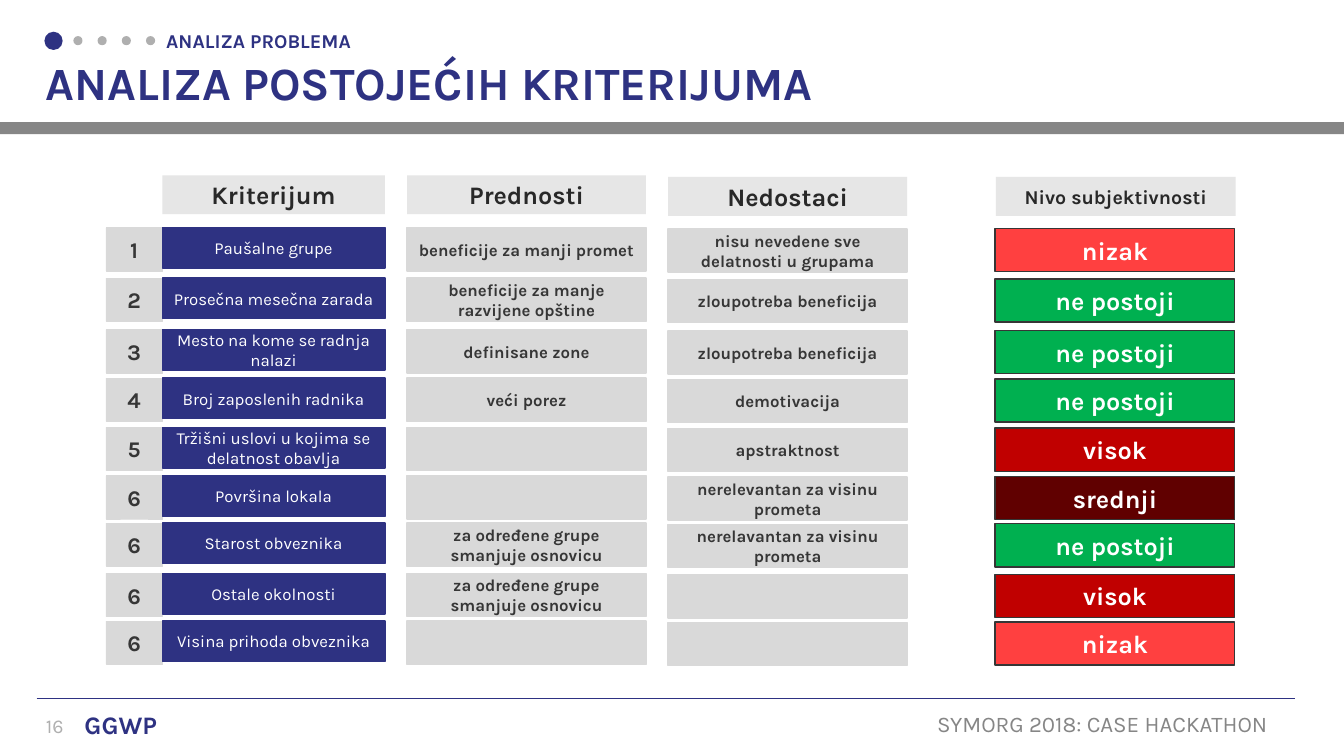
import dataclasses

import lxml.etree
import pptx
import pptx.dml.color
import pptx.enum.shapes
import pptx.enum.text
import pptx.oxml.ns
import pptx.util

Cm = pptx.util.Cm
Pt = pptx.util.Pt
ALIGN = pptx.enum.text.PP_ALIGN
ANCHOR = pptx.enum.text.MSO_ANCHOR
SHAPE = pptx.enum.shapes.MSO_SHAPE


@dataclasses.dataclass(frozen=True)
class Theme:
    font: str = "Karla"
    navy: str = "2E3282"
    white: str = "FFFFFF"
    ink: str = "363636"
    dark: str = "282828"
    gray: str = "868686"
    pale: str = "AFAFAF"
    cell: str = "D9D9D9"
    head: str = "E6E6E6"
    red: str = "FF4040"
    green: str = "00B050"
    deep: str = "C00000"
    brown: str = "600000"
    title: int = 33
    large: int = 18
    mid: int = 16
    small: int = 14
    body: int = 12


def paint(color):
    return pptx.dml.color.RGBColor.from_string(color)


def write(frame, text, *, font, size, color, bold=False,
          align=ALIGN.LEFT, anchor=ANCHOR.TOP, wrap=True, lead=None):
    frame.word_wrap = wrap
    frame.auto_size = pptx.enum.text.MSO_AUTO_SIZE.NONE
    frame.vertical_anchor = anchor
    para = frame.paragraphs[0]
    para.alignment = align
    para.line_spacing = lead
    run = para.add_run()
    run.text = text
    run.font.name = font
    run.font.size = Pt(size)
    run.font.bold = bold
    run.font.color.rgb = paint(color)


class Page:
    def __init__(self, slide, theme):
        self.slide = slide
        self.theme = theme

    def title(self, text, x, y, w, h):
        head = self.slide.shapes.title
        head.left, head.top, head.width, head.height = map(Cm, (x, y, w, h))
        write(head.text_frame, text, font=self.theme.font, size=self.theme.title,
              color=self.theme.navy, bold=True, anchor=ANCHOR.BOTTOM, lead=0.9)

    def label(self, text, x, y, w, h, **style):
        box = self.slide.shapes.add_textbox(Cm(x), Cm(y), Cm(w), Cm(h))
        write(box.text_frame, text, font=self.theme.font, **style)

    def block(self, x, y, w, h, fill, edge=None, width=1, kind=SHAPE.RECTANGLE):
        shape = self.slide.shapes.add_shape(kind, Cm(x), Cm(y), Cm(w), Cm(h))
        shape.shadow.inherit = False
        shape.fill.solid()
        shape.fill.fore_color.rgb = paint(fill)
        if edge:
            shape.line.color.rgb = paint(edge)
            shape.line.width = Pt(width)
        else:
            shape.line.fill.background()
        return shape

    def cell(self, text, x, y, w, h, fill, edge=None, width=1, **style):
        """Draw a filled box with centred text; empty text leaves it blank."""
        shape = self.block(x, y, w, h, fill, edge, width)
        if text:
            write(shape.text_frame, text, font=self.theme.font,
                  align=ALIGN.CENTER, anchor=ANCHOR.MIDDLE, **style)

    def rule(self, x, y, end, color, width):
        line = self.slide.shapes.add_connector(
            pptx.enum.shapes.MSO_CONNECTOR.STRAIGHT, Cm(x), Cm(y), Cm(end), Cm(y))
        line.line.color.rgb = paint(color)
        line.line.width = Pt(width)
        props = line._element.spPr
        lxml.etree.SubElement(props, pptx.oxml.ns.qn("a:effectLst"))


TOPS = (5.74, 7.01, 8.31, 9.53, 10.77, 11.99, 13.18, 14.45, 15.65)
NUMBERS = ("1", "2", "3", "4", "5", "6", "6", "6", "6")
CRITERIA = (
    "Paušalne grupe", "Prosečna mesečna zarada", "Mesto na kome se radnja nalazi",
    "Broj zaposlenih radnika", "Tržišni uslovi u kojima se delatnost obavlja",
    "Površina lokala", "Starost obveznika", "Ostale okolnosti",
    "Visina prihoda obveznika")
PROS = (
    "beneficije za manji promet", "beneficije za manje razvijene opštine",
    "definisane zone", "veći porez", "", "",
    "za određene grupe smanjuje osnovicu", "za određene grupe smanjuje osnovicu", "")
CONS = (
    "nisu nevedene sve delatnosti u grupama", "zloupotreba beneficija",
    "zloupotreba beneficija", "demotivacija", "apstraktnost",
    "nerelevantan za visinu prometa", "nerelavantan za visinu prometa", "", "")
LEVELS = ("nizak", "ne postoji", "ne postoji", "ne postoji", "visok",
          "srednji", "ne postoji", "visok", "nizak")


def frame(page):
    """Draw the header and footer around the content."""
    t = page.theme
    page.label("16", 0.91, 17.86, 2.62, 1, size=t.small, color=t.pale)
    page.rule(0.92, 17.6, 32.64, t.navy, 0.5)
    page.label("GGWP", 1.88, 17.76, 2.46, 1.02, size=t.large, color=t.navy,
               bold=True, wrap=False)
    page.label("SYMORG 2018: CASE HACKATHON", 23.37, 17.78, 9.27, 0.94,
               size=t.mid, color=t.gray, wrap=False)
    page.block(0, 3.08, 33.87, 0.3, t.gray)
    page.label("ANALIZA PROBLEMA", 3.94, 0.66, 6.83, 0.71, size=t.small,
               color=t.navy, bold=True, lead=0.9)
    page.block(1.12, 0.8, 0.46, 0.46, t.navy, kind=SHAPE.OVAL)
    for step in range(4):
        page.block(1.85 + 0.61 * step, 0.91, 0.23, 0.23, t.pale, kind=SHAPE.OVAL)
    page.title("ANALIZA POSTOJEĆIH KRITERIJUMA", 0.89, 1.47, 32.11, 1.45)


def grid(page):
    """Draw the columns of criteria, one box per row."""
    t = page.theme
    heads = (("Kriterijum", 4.09, 4.42, 5.61, t.large),
             ("Prednosti", 10.26, 4.42, 6.02, t.large),
             ("Nedostaci", 16.84, 4.46, 6.02, t.large),
             ("Nivo subjektivnosti", 25.1, 4.46, 6.04, t.small))
    for text, x, y, w, size in heads:
        page.cell(text, x, y, w, 0.98, t.head, size=size, color=t.dark, bold=True)

    plain = dict(fill=t.cell, edge=t.cell, color=t.ink, bold=True)
    columns = (
        (NUMBERS, 2.67, 0, 1.42, 1.09, dict(plain, width=0.5, size=t.mid)),
        (CRITERIA, 4.09, 0, 5.61, 1.02,
         dict(fill=t.navy, edge=t.navy, color=t.white, size=t.body)),
        (PROS, 10.26, 0, 6.02, 1.09, dict(plain, size=t.body)),
        (CONS, 16.84, 0.03, 6.02, 1.09, dict(plain, size=t.body)))
    for texts, x, shift, w, h, style in columns:
        for text, top in zip(texts, TOPS):
            page.cell(text, x, top + shift, w, h, **style)

    fills = {"nizak": t.red, "ne postoji": t.green,
             "visok": t.deep, "srednji": t.brown}
    for text, top in zip(LEVELS, TOPS):
        page.cell(text, 25.08, top + 0.02, 6.04, 1.09, fills[text], t.ink,
                  size=t.large, color=t.white, bold=True)


def main():
    deck = pptx.Presentation()
    deck.slide_width, deck.slide_height = Cm(33.87), Cm(19.05)
    page = Page(deck.slides.add_slide(deck.slide_layouts[5]), Theme())
    frame(page)
    grid(page)
    deck.save("out.pptx")


if __name__ == "__main__":
    main()
